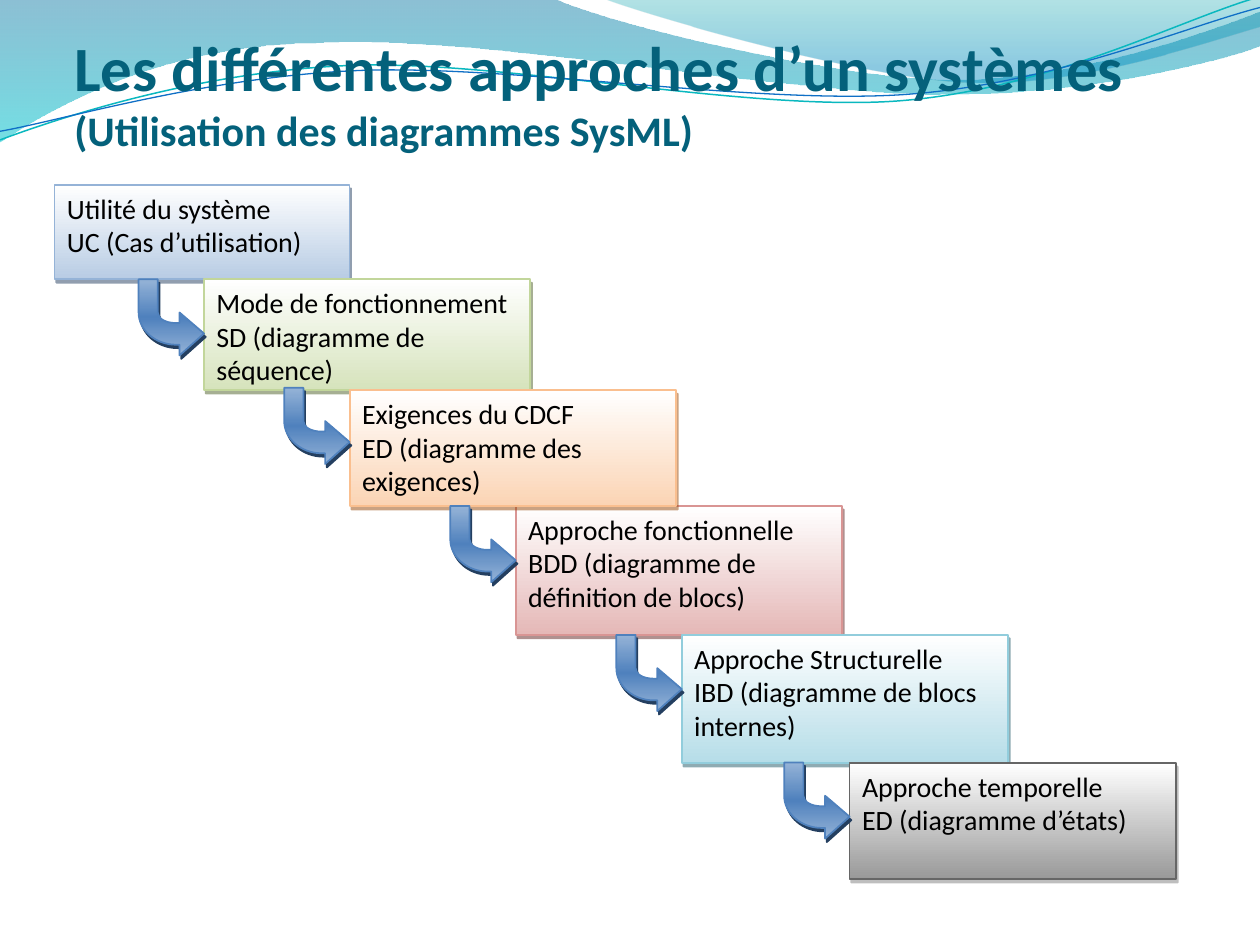
from itertools import accumulate
from lxml import etree
from pptx import Presentation, util as u
from pptx.dml.color import RGBColor
from pptx.enum import shapes, text
from pptx.oxml.ns import qn

# Content
TITLE = [("Les différentes approches d’un systèmes", 36),
         ("(Utilisation des diagrammes SysML)", 24)]
TEAL = RGBColor(0x04, 0x61, 0x7B)
BLACK = RGBColor(0, 0, 0)
WHITE = RGBColor(255, 255, 255)
BLUE = RGBColor(0x4F, 0x81, 0xBD)
PALE = RGBColor(0x95, 0xB3, 0xD7)
NAVY = RGBColor(0x24, 0x3F, 0x60)

# Steps: lines, left, width, height, (fill, line, shadow)
STEPS = [
    (("Utilité du système", "UC (Cas d’utilisation)"), 31.2, 168.5, 53.9,
     (RGBColor(0xB8, 0xCC, 0xE4), PALE, NAVY)),
    (("Mode de fonctionnement", "SD (diagramme de séquence)"), 116.6, 186.5, 63.4,
     (RGBColor(0xD6, 0xE3, 0xBC), RGBColor(0xC2, 0xD6, 0x9B), RGBColor(0x4E, 0x61, 0x28))),
    (("Exigences du CDCF", "ED (diagramme des exigences)"), 199.8, 186.5, 66.2,
     (RGBColor(0xFB, 0xD4, 0xB4), RGBColor(0xFA, 0xBF, 0x8F), RGBColor(0x97, 0x47, 0x06))),
    (("Approche fonctionnelle", "BDD (diagramme de définition de blocs)"), 294.7, 186.5, 73.6,
     (RGBColor(0xE5, 0xB8, 0xB7), RGBColor(0xD9, 0x95, 0x94), RGBColor(0x62, 0x24, 0x23))),
    (("Approche Structurelle", "IBD (diagramme de blocs internes)"), 389.6, 186.5, 73.3,
     (RGBColor(0xB6, 0xDD, 0xE8), RGBColor(0x92, 0xCD, 0xDC), RGBColor(0x20, 0x58, 0x67))),
    (("Approche temporelle", "ED (diagramme d’états)"), 485.5, 186.5, 66.3,
     (RGBColor(0x99, 0x99, 0x99), RGBColor(0x66, 0x66, 0x66), RGBColor(0x7F, 0x7F, 0x7F))),
]
STACK = (0, 1, 3, 4, 2, 5)  # back to front
LIFTS = (0, 1.4, 0, 0, 0.4)  # how far each arrow starts above its step

# Outlines: two numbers make a line, six make a Bézier curve
WAVES = [
    ([(0, -0.7), (316.8, -0.7), (342.7, 12.2, 478, 45.4, 545.8, 45.4),
      (614.2, 45.4, 689.8, 18.7, 720, 6.5), (720.7, 25.9),
      (707.8, 31.7, 626.4, 54.7, 537, 54), (447.8, 54, 275, 20.2, 185, 24.5),
      (92.9, 25.2, 33.1, 59.8, -0.7, 81.4)],
     [(0, RGBColor(0x00, 0x74, 0xA1), 45), (100, RGBColor(0x00, 0xC6, 0xCF), 55)]),
    ([(344.9, -0.7), (366.5, 7.9, 491, 44.6, 553.7, 46.8),
      (616.3, 49.7, 692, 23, 720, 15.1), (720, 0)],
     [(0, RGBColor(0x00, 0xA1, 0xA9), 30), (80, RGBColor(0x00, 0x8B, 0xBF), 45)]),
]
TILT = -2.7
CURVES = [
    ([(-1.4, 63), (33.8, 51.7, 114.1, 29.4, 199.8, 29.9),
      (284.9, 30.3, 425.8, 67.3, 512.4, 64.9), (599, 62.4, 676.5, 25.7, 720.2, 15.5)],
     RGBColor(0x0A, 0xB8, 0xBF), 0.85),
    ([(-1.1, 58), (32.9, 53.8, 118.2, 32.5, 204.1, 33),
      (290.6, 33.4, 428.9, 63.1, 515.5, 61.4), (601.4, 59.6, 678.5, 30.1, 721.4, 21.3)],
     RGBColor(0x0F, 0x6F, 0xC6), 0.75),
]
ARROW = [(37.4, 31), (23.4, 43.5), (23.4, 37.4), (21.4, 37.4),
         (9.6, 37.4, 0, 29, 0, 19), (0, 0), (11, 0), (11, 19),
         (11, 22.5, 15.5, 25, 21.4, 25), (23.4, 25), (23.4, 19)]
REACH = 37.4  # arrow width, its tip touches the next step

deck = Presentation()
deck.slide_width, deck.slide_height = u.Pt(720), u.Pt(540)
slide = deck.slides.add_slide(deck.slide_layouts[6])


def trace(route, left=0, top=0, close=True):
    """Draw an outline, then turn its six-number parts into true curves."""
    route = [[(u.Pt(x + left), u.Pt(y + top)) for x, y in zip(part[::2], part[1::2])]
             for part in route]
    pen = slide.shapes.build_freeform(*route[0][0])
    pen.add_line_segments([part[-1] for part in route[1:]], close=close)
    shape = pen.convert_to_shape()
    shape.shadow.inherit = False
    lines = list(shape._element.spPr.iter(qn("a:lnTo")))
    for line, part in zip(lines, route[1:]):
        if len(part) == 3:
            bend = etree.Element(qn("a:cubicBezTo"))
            for x, y in part:
                etree.SubElement(bend, qn("a:pt"), x=str(x - shape.left), y=str(y - shape.top))
            line.getparent().replace(line, bend)
    return shape


def tint(box, color, alpha):
    node = etree.SubElement(box, qn("a:srgbClr"), val=str(color))
    if alpha < 100:
        etree.SubElement(node, qn("a:alpha"), val=str(alpha * 1000))


def blend(shape, stops):
    """Fill from top to bottom with (position, colour, opacity) stops."""
    shape.fill.gradient()
    shape.fill.gradient_angle = 270
    bag = shape._element.spPr.find(qn("a:gradFill")).find(qn("a:gsLst"))
    for old in list(bag):
        bag.remove(old)
    for place, color, alpha in stops:
        tint(etree.SubElement(bag, qn("a:gs"), pos=str(place * 1000)), color, alpha)


def stroke(shape, color, width):
    shape.line.color.rgb = color
    shape.line.width = u.Pt(width)


def shade(shape, color, alpha):
    shape.shadow.inherit = False
    bag = shape._element.spPr.find(qn("a:effectLst"))
    node = etree.SubElement(bag, qn("a:outerShdw"), dist=str(u.Pt(2.2)),
                            dir="3780000", algn="ctr", rotWithShape="0")
    tint(node, color, alpha)


def write(para, words, **form):
    run = para.add_run()
    run.text = words
    run.font.color.rgb = form.pop("color")
    for key, val in {"name": "Calibri", **form}.items():
        setattr(run.font, key, val)


# Background waves
for route, stops in WAVES:
    wave = trace(route)
    blend(wave, stops)
    wave.line.fill.background()
for route, color, width in CURVES:
    curve = trace(route, close=False)
    curve.rotation = TILT
    curve.fill.background()
    stroke(curve, color, width)

# Title
frame = slide.shapes.add_textbox(*map(u.Pt, (42.5, 9.2, 648, 79.2))).text_frame
FORM = {"word_wrap": True, "vertical_anchor": text.MSO_ANCHOR.BOTTOM, "margin_left": 0,
        "margin_right": 0, "margin_top": u.Pt(3.6), "margin_bottom": 0}
for key, val in FORM.items():
    setattr(frame, key, val)
para = frame.paragraphs[0]
for n, (words, size) in enumerate(TITLE):
    if n:
        para.add_line_break()
    write(para, words, size=u.Pt(size), bold=True, color=TEAL)

# Steps: each one starts where the one before ends
tops = list(accumulate((step[3] for step in STEPS), initial=105.7))
for n in STACK:
    lines, left, width, height, (fill, edge, dark) = STEPS[n]
    box = slide.shapes.add_shape(shapes.MSO_SHAPE.RECTANGLE,
                                 *map(u.Pt, (left, tops[n], width, height)))
    blend(box, [(0, WHITE, 100), (100, fill, 100)])
    stroke(box, edge, 1)
    shade(box, dark, 50)
    frame = box.text_frame
    frame.word_wrap = True
    frame.vertical_anchor = text.MSO_ANCHOR.TOP
    for i, words in enumerate(lines):
        para = frame.add_paragraph() if i else frame.paragraphs[0]
        para.alignment = text.PP_ALIGN.LEFT
        write(para, words, size=u.Pt(16), color=BLACK)

# Arrows into each next step
for step, top, lift in zip(STEPS[1:], tops[1:], LIFTS):
    arrow = trace(ARROW, step[1] - REACH, top - lift)
    blend(arrow, [(0, PALE, 100), (50, BLUE, 100), (100, PALE, 100)])
    stroke(arrow, BLUE, 1)
    shade(arrow, NAVY, 100)

deck.save("out.pptx")
